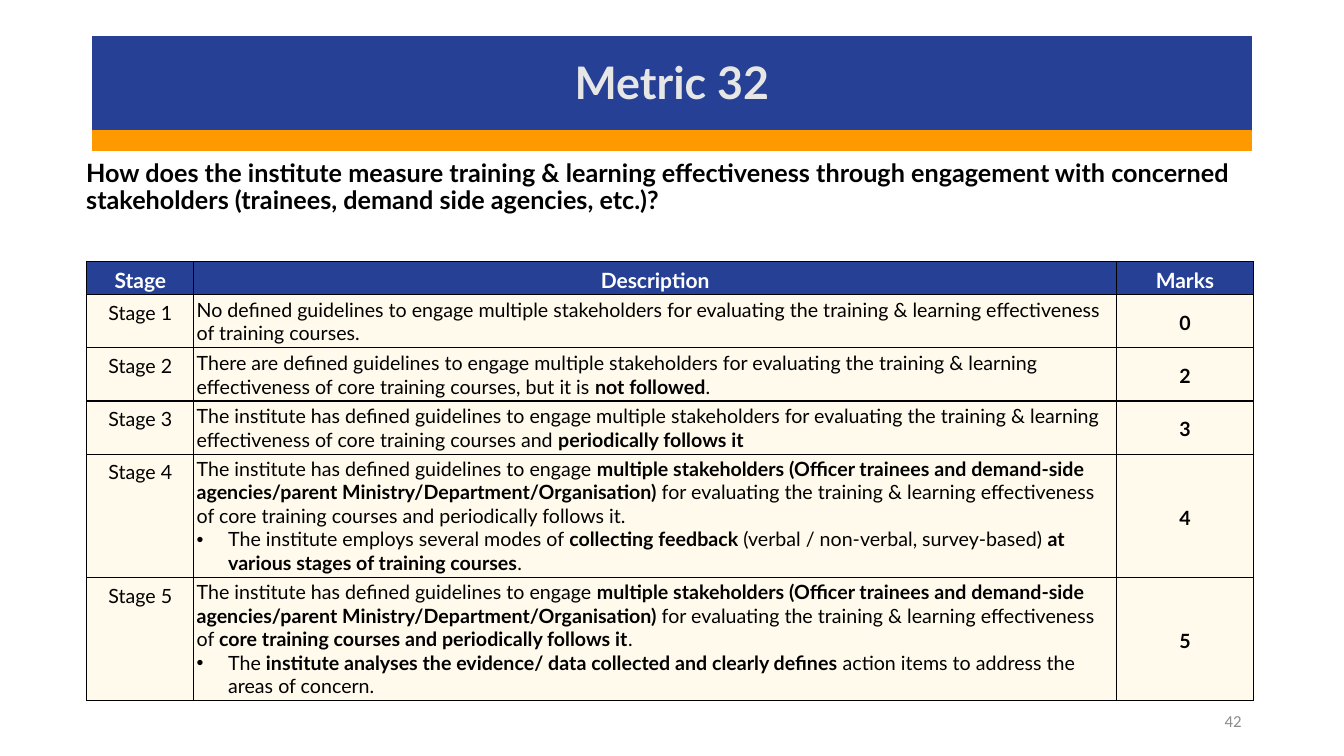
from lxml import etree
from pptx import Presentation
from pptx import util as u
from pptx.dml.color import RGBColor
from pptx.enum import shapes, text
from pptx.oxml import ns

Pt = u.Pt
BLUE, ORANGE, CREAM = "254094", "FF9900", "FFFAEB"
BLACK, WHITE, PALE, GREY = "000000", "FFFFFF", "E7E6E6", "8C8C8C"
LEFT, CENTER, RIGHT = text.PP_ALIGN.LEFT, text.PP_ALIGN.CENTER, text.PP_ALIGN.RIGHT
TOP, MIDDLE, BOTTOM = text.MSO_ANCHOR.TOP, text.MSO_ANCHOR.MIDDLE, text.MSO_ANCHOR.BOTTOM

QUESTION = ("How does the institute measure training & learning effectiveness through "
            "engagement with concerned stakeholders (trainees, demand side agencies, etc.)?")
GUIDELINES = "The institute has defined guidelines to engage "
EVALUATING = "for evaluating the training & learning effectiveness "
MULTIPLE = ("**multiple stakeholders (Officer trainees and demand-side "
            "agencies/parent Ministry/Department/Organisation) **")
STAGES = [
    (38, "0", ["No defined guidelines to engage multiple stakeholders "
               + EVALUATING + "of training courses."]),
    (38, "2", ["There are defined guidelines to engage multiple stakeholders " + EVALUATING
               + "of core training courses, but it is **not followed**."]),
    (38, "3", [GUIDELINES + "multiple stakeholders " + EVALUATING
               + "of core training courses and **periodically follows it**"]),
    (88, "4", [GUIDELINES + MULTIPLE + EVALUATING
               + "of core training courses and periodically follows it.",
               "The institute employs several modes of **collecting feedback **(verbal / "
               "non-verbal, survey-based) **at various stages of training courses**."]),
    (88, "5", [GUIDELINES + MULTIPLE + EVALUATING
               + "of **core training courses and periodically follows it**.",
               "The **institute analyses the evidence/ data collected and clearly defines "
               "**action items to address the areas of concern."]),
]


def rgb(color):
    return RGBColor.from_string(color)


def write(paragraph, words, size, color, bold=False, align=LEFT, spacing=None, font="Lato"):
    for index, part in enumerate(words.split("**")):
        if part:
            run = paragraph.add_run()
            run.text = part
            if "**" in words:
                run.font.bold = index % 2 == 1
    paragraph.alignment = align
    if spacing:
        paragraph.line_spacing = spacing
    paragraph.font.name = font
    paragraph.font.size = Pt(size)
    paragraph.font.bold = bold
    paragraph.font.color.rgb = rgb(color)


def add_bullet(paragraph):
    props = paragraph._p.get_or_add_pPr()
    props.set("marL", str(Pt(22.5)))
    props.set("indent", str(-Pt(22.5)))
    etree.SubElement(props, ns.qn("a:buFont"), typeface="Arial")
    etree.SubElement(props, ns.qn("a:buChar"), char="•")


def add_label(slide, box, words, size, color, anchor=MIDDLE, **style):
    frame = slide.shapes.add_textbox(*map(Pt, box)).text_frame
    frame.word_wrap = True
    frame.vertical_anchor = anchor
    write(frame.paragraphs[0], words, size, color, **style)


def add_banner(slide, left, top, width, height):
    stripe_height = 14
    title_height = height - stripe_height
    for offset, band_height, color in ((0, title_height, BLUE),
                                       (title_height, stripe_height, ORANGE)):
        band = slide.shapes.add_shape(shapes.MSO_SHAPE.RECTANGLE, Pt(left), Pt(top + offset),
                                      Pt(width), Pt(band_height))
        band.shadow.inherit = False
        band.fill.solid()
        band.fill.fore_color.rgb = rgb(color)
        band.line.color.rgb = rgb(color)
        band.line.width = Pt(1)
    add_label(slide, (left, top + 2, width, title_height - 2), "Metric 32", 32, PALE,
              bold=True, align=CENTER, spacing=0.9)


def style_cell(cell, fill, anchor, margin):
    cell.margin_left = cell.margin_right = cell.margin_top = cell.margin_bottom = Pt(margin)
    cell.vertical_anchor = anchor
    props = cell._tc.get_or_add_tcPr()
    for side in ("a:lnL", "a:lnR", "a:lnT", "a:lnB"):
        border = etree.SubElement(props, ns.qn(side), w=str(Pt(1)))
        solid = etree.SubElement(border, ns.qn("a:solidFill"))
        etree.SubElement(solid, ns.qn("a:srgbClr"), val=BLACK)
    cell.fill.solid()
    cell.fill.fore_color.rgb = rgb(fill)


def add_stages(slide, left, top, width):
    heights = [23.4] + [height for height, _, _ in STAGES]
    table = slide.shapes.add_table(len(heights), 3, Pt(left), Pt(top),
                                   Pt(width), Pt(sum(heights))).table
    table.first_row = table.horz_banding = False
    stage_width, marks_width = 76.5, 98
    for column, column_width in zip(table.columns,
                                    (stage_width, width - stage_width - marks_width, marks_width)):
        column.width = Pt(column_width)
    for row, height in zip(table.rows, heights):
        row.height = Pt(height)

    for column, (heading, anchor) in enumerate((("Stage", MIDDLE), ("Description", BOTTOM),
                                                ("Marks", MIDDLE))):
        cell = table.cell(0, column)
        style_cell(cell, BLUE, anchor, 1.5)
        write(cell.text_frame.paragraphs[0], heading, 15, WHITE, True, CENTER, 1.15)

    for number, (_, marks, description) in enumerate(STAGES, 1):
        stage_cell, description_cell, marks_cell = (table.cell(number, c) for c in range(3))
        style_cell(stage_cell, CREAM, TOP, 2)
        write(stage_cell.text_frame.paragraphs[0], f"Stage {number}", 14, BLACK,
              align=CENTER, spacing=1.15)
        style_cell(description_cell, CREAM, BOTTOM, 2)
        frame = description_cell.text_frame
        for index, words in enumerate(description):
            paragraph = frame.add_paragraph() if index else frame.paragraphs[0]
            if index:
                add_bullet(paragraph)
            write(paragraph, words, 14, BLACK)
        style_cell(marks_cell, CREAM, MIDDLE, 1.5)
        write(marks_cell.text_frame.paragraphs[0], marks, 14, BLACK, True, CENTER, 1.15)


def main():
    deck = Presentation()
    deck.slide_width, deck.slide_height = Pt(960), Pt(540)
    slide = deck.slides.add_slide(deck.slide_layouts[6])
    add_banner(slide, 66, 26, 828, 81.5)
    add_label(slide, (54.5, 111, 860, 60), QUESTION, 18, BLACK, TOP, bold=True, spacing=0.9)
    add_stages(slide, 62, 186.8, 833.5)
    add_label(slide, (678, 500.5, 216, 29), "42", 12, GREY, align=RIGHT, font="Calibri")
    deck.save("out.pptx")


if __name__ == "__main__":
    main()
